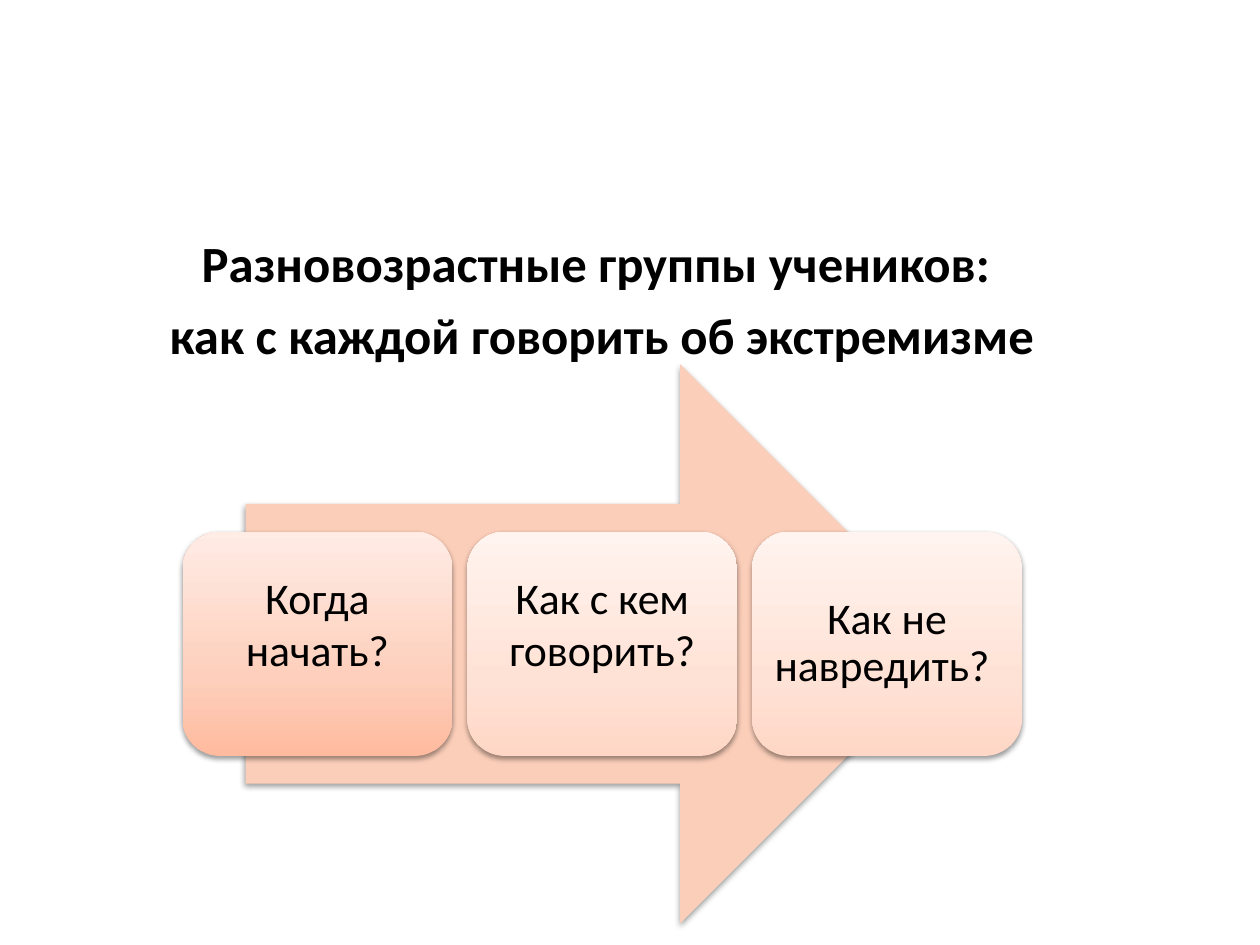
from copy import deepcopy

from lxml import etree
from pptx import Presentation
from pptx.dml.color import RGBColor
from pptx.enum.shapes import MSO_SHAPE
from pptx.enum.text import MSO_ANCHOR, PP_ALIGN
from pptx.oxml import parse_xml
from pptx.oxml.ns import nsdecls, qn
from pptx.util import Cm, Pt

CENTER = PP_ALIGN.CENTER
MIDDLE = MSO_ANCHOR.MIDDLE
RIGHT_ARROW = MSO_SHAPE.RIGHT_ARROW
ROUNDED_RECTANGLE = MSO_SHAPE.ROUNDED_RECTANGLE

FONT = "Calibri"
COLORS = {"text": "000000", "arrow": "FBCEB9"}
GRADIENTS = {
    "strong": ("FFBB9F", "FDCFBC", "FFECE5"),
    "light": ("FFD7C6", "FFE2D6", "FFF4EF"),
}
STOP_POSITIONS = (0, 0.35, 1)


def add_soft_shape(kind, left, top, width, height):
    """Add a shape without outline and with a soft shadow below it."""
    shape = slide.shapes.add_shape(kind, Cm(left), Cm(top), Cm(width), Cm(height))
    shape.line.fill.background()
    shape.shadow.inherit = False
    effects = shape._element.spPr.find(qn("a:effectLst"))
    effects.append(parse_xml(
        f'<a:outerShdw {nsdecls("a")} blurRad="40000" dist="20000" dir="5400000"'
        ' rotWithShape="0"><a:srgbClr val="000000"><a:alpha val="38000"/>'
        '</a:srgbClr></a:outerShdw>'))
    return shape


def format_text(paragraph, size, bold=False):
    paragraph.alignment = CENTER
    paragraph.font.name = FONT
    paragraph.font.size = Pt(size)
    paragraph.font.bold = bold
    paragraph.font.color.rgb = RGBColor.from_string(COLORS["text"])


presentation = Presentation()
presentation.slide_width = Cm(25.4)
presentation.slide_height = Cm(19.05)
slide = presentation.slides.add_slide(presentation.slide_layouts[1])
title = slide.shapes.title._element
title.getparent().remove(title)

# Heading
body = slide.placeholders[1]
body.left, body.top, body.width, body.height = Cm(0.71), Cm(4.55), Cm(22.86), Cm(12.57)
heading_lines = ("Разновозрастные группы учеников: ", "как с каждой говорить об экстремизме")
body.text_frame.text = "\n".join(heading_lines)
for index, paragraph in enumerate(body.text_frame.paragraphs):
    properties = paragraph._p.get_or_add_pPr()
    properties.set("marL", "0")
    properties.set("indent", "0")
    etree.SubElement(properties, qn("a:buNone"))
    paragraph.space_before = Pt(6 * index)
    format_text(paragraph, 29, bold=True)

# Arrow behind the questions
arrow = add_soft_shape(RIGHT_ARROW, 4.95, 7.34, 14.4, 11.28)
arrow.fill.solid()
arrow.fill.fore_color.rgb = RGBColor.from_string(COLORS["arrow"])

# Questions: text, gradient, bottom inset, line spacing
questions = (
    ("Когда начать?", "strong", 0.9, 1),
    ("Как с кем говорить?", "light", 0.9, 1),
    ("Как не навредить? ", "light", 0.05, 0.9),
)
for index, (text, gradient, bottom_inset, line_spacing) in enumerate(questions):
    box = add_soft_shape(ROUNDED_RECTANGLE, 3.68 + 5.74 * index, 10.72, 5.44, 4.52)
    box.fill.gradient()
    box.fill.gradient_angle = 90
    stop_list = box._element.spPr.find(qn("a:gradFill")).find(qn("a:gsLst"))
    stop_list.append(deepcopy(stop_list[0]))
    for stop, position, color in zip(box.fill.gradient_stops, STOP_POSITIONS, GRADIENTS[gradient]):
        stop.position = position
        stop.color.rgb = RGBColor.from_string(color)

    frame = box.text_frame
    frame.word_wrap = True
    frame.vertical_anchor = MIDDLE
    frame.margin_left = frame.margin_right = frame.margin_top = Cm(0.05)
    frame.margin_bottom = Cm(bottom_inset)
    frame.text = text
    paragraph = frame.paragraphs[0]
    paragraph.line_spacing = line_spacing
    format_text(paragraph, 25)

presentation.save("out.pptx")
